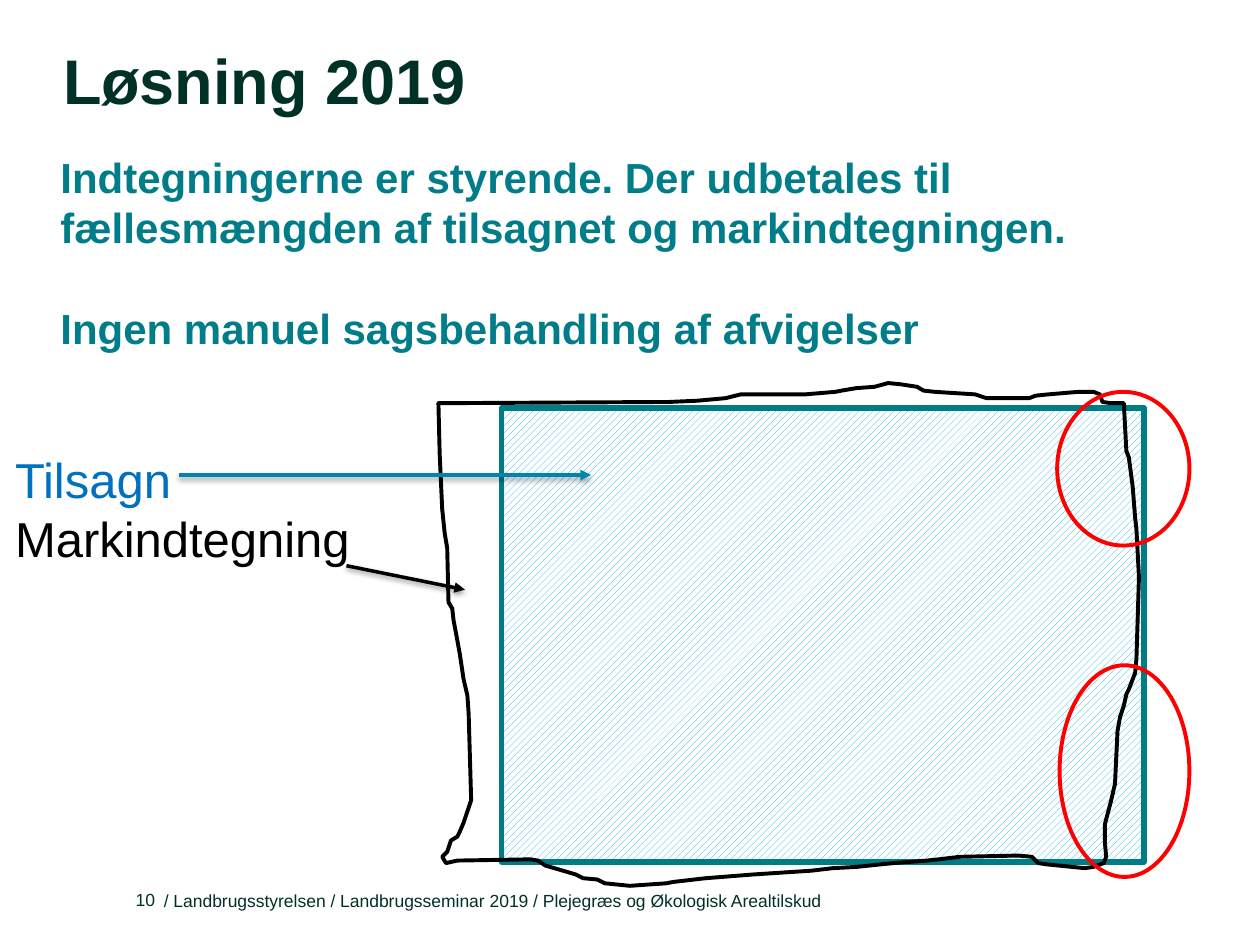
from lxml import etree
from pptx import Presentation
from pptx.dml.color import RGBColor
from pptx.enum import dml, shapes as sh, text as tx
from pptx.oxml.ns import qn
from pptx.util import Inches, Pt

DARK, TEAL, BLACK, RED = "003127", "007D88", "000000", "FF0000"

TITLE = "Løsning 2019"
BODY = [
    "Indtegningerne er styrende. Der udbetales til "
    "fællesmængden af tilsagnet og markindtegningen.",
    "Ingen manuel sagsbehandling af afvigelser",
]
LABELS = [("Tilsagn", "0070C0"), ("Markindtegning", BLACK)]
FOOTER = ("/ Landbrugsstyrelsen / Landbrugsseminar 2019 / "
          "Plejegræs og Økologisk Arealtilskud")

# Hand-drawn field outline, clockwise from top left
OUTLINE = [
    (3.48, 3.2), (5.31, 3.19), (5.54, 3.18), (5.76, 3.16), (5.88, 3.13),
    (6.1, 3.13), (6.39, 3.13), (6.63, 3.11), (6.68, 3.1), (6.8, 3.08),
    (6.94, 3.07), (7.05, 3.04), (7.15, 3.05), (7.28, 3.07), (7.33, 3.1),
    (7.42, 3.11), (7.74, 3.13), (7.83, 3.16), (8.17, 3.16), (8.22, 3.14),
    (8.32, 3.13), (8.56, 3.11), (8.68, 3.11), (8.73, 3.13), (8.75, 3.19),
    (8.82, 3.2), (8.92, 3.2), (8.94, 3.58), (8.96, 3.63), (8.99, 3.86),
    (9.01, 4.11), (9.02, 4.2), (9.04, 4.58), (9.02, 5.23), (9.01, 5.34),
    (8.96, 5.47), (8.94, 5.51), (8.92, 5.6), (8.89, 5.69), (8.87, 5.8),
    (8.85, 6.22), (8.82, 6.35), (8.77, 6.54), (8.77, 6.69), (8.78, 6.8),
    (8.76, 6.85), (8.68, 6.88), (8.61, 6.89), (8.31, 6.86), (8.24, 6.85),
    (8.19, 6.8), (8.08, 6.79), (7.62, 6.8), (7.45, 6.82), (7.36, 6.83),
    (7.09, 6.85), (6.8, 6.88), (6.61, 6.89), (6.44, 6.91), (5.98, 6.94),
    (5.6, 6.97), (5.34, 7), (5.29, 7.01), (5.0, 7.03), (4.8, 7.01),
    (4.74, 6.98), (4.63, 6.97), (4.57, 6.94), (4.4, 6.89), (4.33, 6.87),
    (4.27, 6.83), (4.21, 6.82), (3.63, 6.83), (3.54, 6.85), (3.51, 6.8),
    (3.55, 6.76), (3.58, 6.67), (3.63, 6.64), (3.65, 6.6), (3.68, 6.53),
    (3.72, 6.41), (3.74, 6.35), (3.72, 5.66), (3.71, 5.52), (3.68, 5.39),
    (3.65, 5.19), (3.63, 5.08), (3.6, 4.92), (3.59, 4.83), (3.56, 4.78),
    (3.55, 4.35), (3.53, 4.23), (3.51, 4.04), (3.49, 3.6),
]
FIELD = (3.98, 3.24, 5.1, 3.6)
RINGS = [(8.41, 5.28, 1.03, 1.68), (8.39, 3.11, 1.05, 1.22)]
ARROWS = [((1.42, 3.77), (4.69, 3.77), "0085AD"),
          ((2.75, 4.49), (3.69, 4.68), BLACK)]


def paint(color, value):
    color.rgb = RGBColor.from_string(value)


def write(box, lines, size=10, color=DARK, bold=False, align="LEFT",
          anchor="TOP", space=1.0, gap=0):
    """Lines are strings, or (string, colour) pairs."""
    frame = slide.shapes.add_textbox(*map(Inches, box)).text_frame
    frame.word_wrap = True
    frame.vertical_anchor = tx.MSO_ANCHOR[anchor]
    frame.margin_left = frame.margin_right = 0
    frame.margin_top = frame.margin_bottom = 0
    for i, line in enumerate(lines):
        words, tint = (line, color) if isinstance(line, str) else line
        para = frame.paragraphs[0] if i == 0 else frame.add_paragraph()
        para.alignment = tx.PP_ALIGN[align]
        para.line_spacing = space
        if i and gap:
            para.space_before = Pt(gap)
        run = para.add_run()
        run.text = words
        run.font.name, run.font.size, run.font.bold = "Arial", Pt(size), bold
        paint(run.font.color, tint)


def trace(shape, color, width):
    """Outline only, no fill or shadow."""
    shape.shadow.inherit = False
    shape.fill.background()
    paint(shape.line.color, color)
    shape.line.width = Pt(width)
    return shape


def arrow(start, end, color):
    line = slide.shapes.add_connector(
        sh.MSO_CONNECTOR.STRAIGHT, *map(Inches, start + end))
    paint(line.line.color, color)
    line.line.width = Pt(2)
    props = line._element.spPr
    etree.SubElement(props.find(qn("a:ln")), qn("a:tailEnd"), type="triangle")
    # Soft shadow straight below
    effects = etree.SubElement(props, qn("a:effectLst"))
    cast = etree.SubElement(effects, qn("a:outerShdw"), blurRad=str(Pt(3.1)),
                            dist=str(Pt(1.6)), dir="5400000", rotWithShape="0")
    tint = etree.SubElement(cast, qn("a:srgbClr"), val=BLACK)
    etree.SubElement(tint, qn("a:alpha"), val="38000")


deck = Presentation()
deck.slide_width, deck.slide_height = Inches(10), Inches(7.5)
slide = deck.slides.add_slide(deck.slide_layouts[6])

# Footer and title
write((0.9, 7, 0.33, 0.22), ["10"], align="RIGHT", anchor="BOTTOM")
write((1.3, 7.05, 5.51, 0.18), [FOOTER], anchor="BOTTOM")
write((0.5, 0.39, 3.75, 0.55), [TITLE], size=36, bold=True, space=0.91)

# Hatched field
field = trace(slide.shapes.add_shape(
    sh.MSO_SHAPE.RECTANGLE, *map(Inches, FIELD)), "007C86", 3.25)
field.fill.patterned()
field.fill.pattern = dml.MSO_PATTERN.WIDE_UPWARD_DIAGONAL
paint(field.fill.fore_color, "00B0F0")
paint(field.fill.back_color, "FFFFFF")

# Drawn outline (whole EMU, as points are rounded) and the rings on it
first, *rest = [(Inches(x), Inches(y)) for x, y in OUTLINE]
pen = slide.shapes.build_freeform(*first)
pen.add_line_segments(rest, close=True)
trace(pen.convert_to_shape(), BLACK, 2.25)
for ring in RINGS:
    trace(slide.shapes.add_shape(
        sh.MSO_SHAPE.OVAL, *map(Inches, ring)), RED, 2.25)

# Body, labels and arrows
write((0.48, 1.2, 8.53, 1.62), BODY, size=24, color=TEAL, bold=True, gap=29)
write((0.12, 3.57, 2.84, 0.94), LABELS, size=28)
for item in ARROWS:
    arrow(*item)

deck.save("out.pptx")
